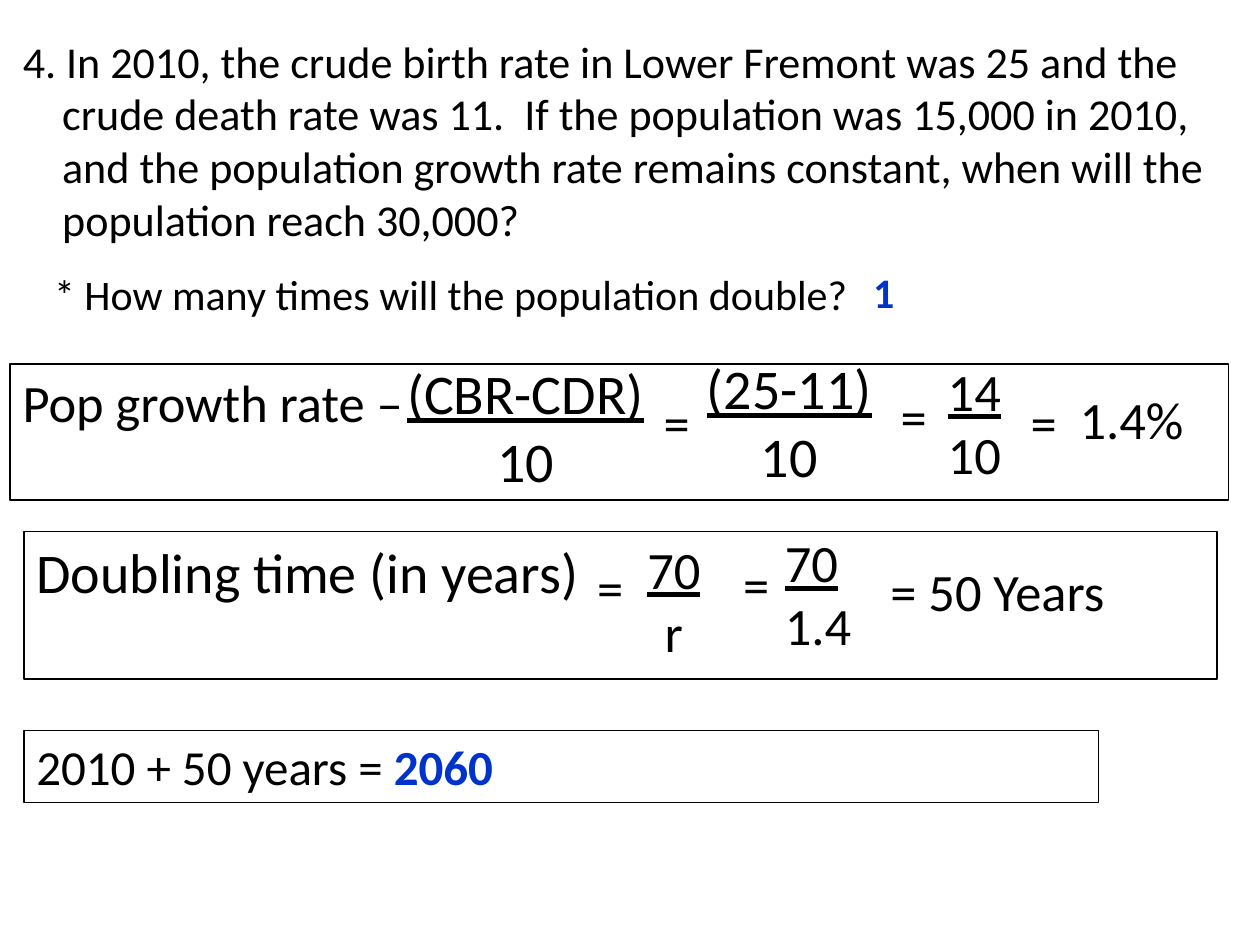
from pptx import Presentation
from pptx.dml.color import RGBColor
from pptx.enum.shapes import MSO_SHAPE
from pptx.enum.text import MSO_ANCHOR, MSO_AUTO_SIZE, PP_ALIGN
from pptx.util import Pt

BLACK = RGBColor(0x00, 0x00, 0x00)
WHITE = RGBColor(0xFF, 0xFF, 0xFF)
ANSWER_BLUE = RGBColor(0x00, 0x33, 0xCC)
ANSWER = {"bold": True, "color": ANSWER_BLUE}


def add_run(paragraph, text, size, color=BLACK, **formats):
    run = paragraph.add_run()
    run.text = text
    run.font.color.rgb = color
    for name, value in {"name": "Calibri", "size": Pt(size), **formats}.items():
        setattr(run.font, name, value)


def add_label(slide, box, text, size, **formats):
    shape = slide.shapes.add_textbox(*map(Pt, box))
    shape.text_frame.word_wrap = True
    add_run(shape.text_frame.paragraphs[0], text, size, **formats)
    return shape


def add_fraction(slide, box, top, bottom, size, alignment=PP_ALIGN.CENTER):
    frame = add_label(slide, box, top, size, underline=True).text_frame
    add_run(frame.add_paragraph(), bottom, size)
    for paragraph in frame.paragraphs:
        paragraph.alignment = alignment


def add_panel(slide, box, text, size):
    panel = slide.shapes.add_shape(MSO_SHAPE.RECTANGLE, *map(Pt, box))
    panel.shadow.inherit = False
    panel.fill.background()
    panel.line.color.rgb = BLACK
    panel.line.width = Pt(0.75)
    frame = panel.text_frame
    frame.vertical_anchor = MSO_ANCHOR.TOP
    paragraph = frame.paragraphs[0]
    paragraph.alignment = PP_ALIGN.LEFT
    add_run(paragraph, text, size)
    return paragraph


def add_equals_signs(slide, box, offsets):
    left, top = box[:2]
    for x, y in offsets:
        add_label(slide, (left + x, top + y, 30, 44), "=", 30)


def fill_title(slide, box):
    title = slide.shapes.title
    title.left, title.top, title.width, title.height = map(Pt, box)
    frame = title.text_frame
    frame.auto_size = MSO_AUTO_SIZE.NONE
    frame.vertical_anchor = MSO_ANCHOR.MIDDLE
    paragraph = frame.paragraphs[0]
    paragraph.alignment = PP_ALIGN.LEFT
    # Hanging indent behind the question number
    properties = paragraph._p.get_or_add_pPr()
    properties.set("marL", str(Pt(22.5)))
    properties.set("indent", str(-Pt(22.5)))
    add_run(paragraph, "4. In 2010, the crude birth rate in Lower Fremont was 25 and the "
            "crude death rate was 11.  If the population was 15,000 in 2010, "
            "and the population growth rate remains constant, when will the "
            "population reach 30,000?", 25.2)


def add_question(slide, box):
    left, top, width, height = box
    add_label(slide, box, "* How many times will the population double?", 24)
    add_label(slide, (left + 468, top - 0.8, 60, height), "1", 24, **ANSWER)


def add_growth_rate(slide, box):
    left, top = box[:2]
    add_panel(slide, box, "Pop growth rate –", 30)
    add_fraction(slide, (left + 209.5, top - 6.5, 170, 85), "(CBR-CDR)", "10", 32)
    add_fraction(slide, (left + 387.3, top - 9.3, 116, 85), "(25-11)", "10", 32)
    add_fraction(slide, (left + 507, top - 6.5, 88, 80), "14", "10", 30)
    add_equals_signs(slide, box, [(366.4, 11.5), (501.8, 8), (576, 11.5)])
    add_label(slide, (left + 604, top + 9.4, 84, 44), "1.4%", 30)


def add_doubling_time(slide, box):
    left, top = box[:2]
    add_panel(slide, box, "Doubling time (in years)", 32)
    add_fraction(slide, (left + 327.4, top - 0.7, 88, 80), "70", "r", 30)
    add_fraction(slide, (left + 427.7, top - 4.3, 88, 80), "70", "1.4", 30, PP_ALIGN.LEFT)
    add_equals_signs(slide, box, [(320.4, 10.1), (403.9, 8)])
    add_label(slide, (left + 488.1, top + 12.3, 160, 44), "= 50 Years", 30)


def add_final_year(slide, box):
    paragraph = add_panel(slide, box, "2010 + 50 years = ", 28)
    add_run(paragraph, "2060", 28, **ANSWER)


def main():
    presentation = Presentation()
    presentation.slide_width, presentation.slide_height = Pt(720), Pt(540)
    slide = presentation.slides.add_slide(presentation.slide_layouts[5])
    slide.background.fill.solid()
    slide.background.fill.fore_color.rgb = WHITE

    # Problem statement
    fill_title(slide, (5.8, 21.6, 696.2, 116.6))
    add_question(slide, (23.8, 149.8, 660, 36))
    # Worked solution
    add_growth_rate(slide, (5.8, 208, 696.2, 77.8))
    add_doubling_time(slide, (13.7, 303.8, 681.8, 84.2))
    add_final_year(slide, (13.7, 417.6, 614.2, 41))

    presentation.save("out.pptx")


if __name__ == "__main__":
    main()
